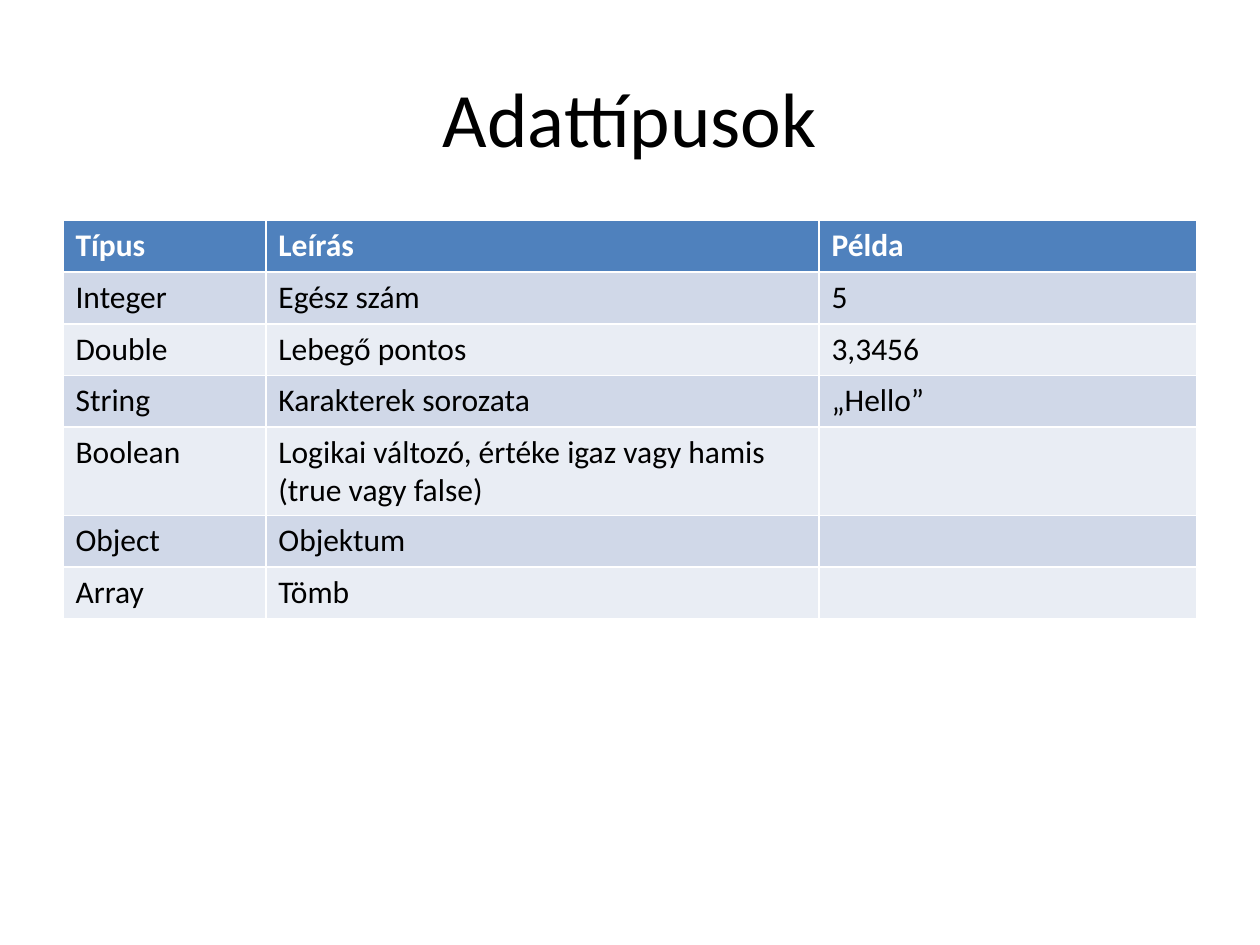
from pptx import Presentation
from pptx.dml.color import RGBColor
from pptx.enum.text import MSO_ANCHOR, PP_ALIGN
from pptx.util import Inches, Pt

BLACK = RGBColor(0x00, 0x00, 0x00)
WHITE = RGBColor(0xFF, 0xFF, 0xFF)
HEADER_BLUE = RGBColor(0x4F, 0x81, 0xBD)
BAND_DARK = RGBColor(0xD0, 0xD8, 0xE8)
BAND_LIGHT = RGBColor(0xE9, 0xED, 0xF4)

TITLE_FONT = {"name": "Calibri", "size": Pt(44), "bold": False}
HEADER_FONT = {"name": "Calibri", "size": Pt(18), "bold": True}
BODY_FONT = {"name": "Calibri", "size": Pt(18), "bold": False}

COLUMN_WIDTHS = [1.61, 4.39, 3]
ROW_HEIGHT = 0.41
DATA_TYPES = [
    ("Típus", "Leírás", "Példa"),
    ("Integer", "Egész szám", "5"),
    ("Double", "Lebegő pontos", "3,3456"),
    ("String", "Karakterek sorozata", "„Hello”"),
    ("Boolean", "Logikai változó, értéke igaz vagy hamis (true vagy false)", ""),
    ("Object", "Objektum", ""),
    ("Array", "Tömb", ""),
]


def write_text(paragraph, text, font_values, color):
    run = paragraph.add_run()
    run.text = text
    for attribute, value in font_values.items():
        setattr(run.font, attribute, value)
    run.font.color.rgb = color


presentation = Presentation()
presentation.slide_width = Inches(10)
presentation.slide_height = Inches(7.5)
slide = presentation.slides.add_slide(presentation.slide_layouts[6])

# Title
title = slide.shapes.add_textbox(Inches(0.5), Inches(0.3), Inches(9), Inches(1.25))
title.text_frame.word_wrap = True
title.text_frame.vertical_anchor = MSO_ANCHOR.MIDDLE
title_paragraph = title.text_frame.paragraphs[0]
title_paragraph.alignment = PP_ALIGN.CENTER
write_text(title_paragraph, "Adattípusok", TITLE_FONT, BLACK)

# Table of data types; its default style draws the white borders
table_frame = slide.shapes.add_table(
    len(DATA_TYPES), len(COLUMN_WIDTHS),
    Inches(0.5), Inches(1.75), Inches(9), Inches(4.95),
)
table = table_frame.table
for column, width in zip(table.columns, COLUMN_WIDTHS):
    column.width = Inches(width)

for row_index, (row, texts) in enumerate(zip(table.rows, DATA_TYPES)):
    row.height = Inches(ROW_HEIGHT)
    if row_index == 0:
        fill_color, font_values, text_color = HEADER_BLUE, HEADER_FONT, WHITE
    else:
        fill_color = BAND_DARK if row_index % 2 else BAND_LIGHT
        font_values, text_color = BODY_FONT, BLACK
    for cell, text in zip(row.cells, texts):
        cell.fill.solid()
        cell.fill.fore_color.rgb = fill_color
        if text:
            write_text(cell.text_frame.paragraphs[0], text, font_values, text_color)

# The frame reaches below the last row
table_frame.height = Inches(4.95)

presentation.save("out.pptx")
